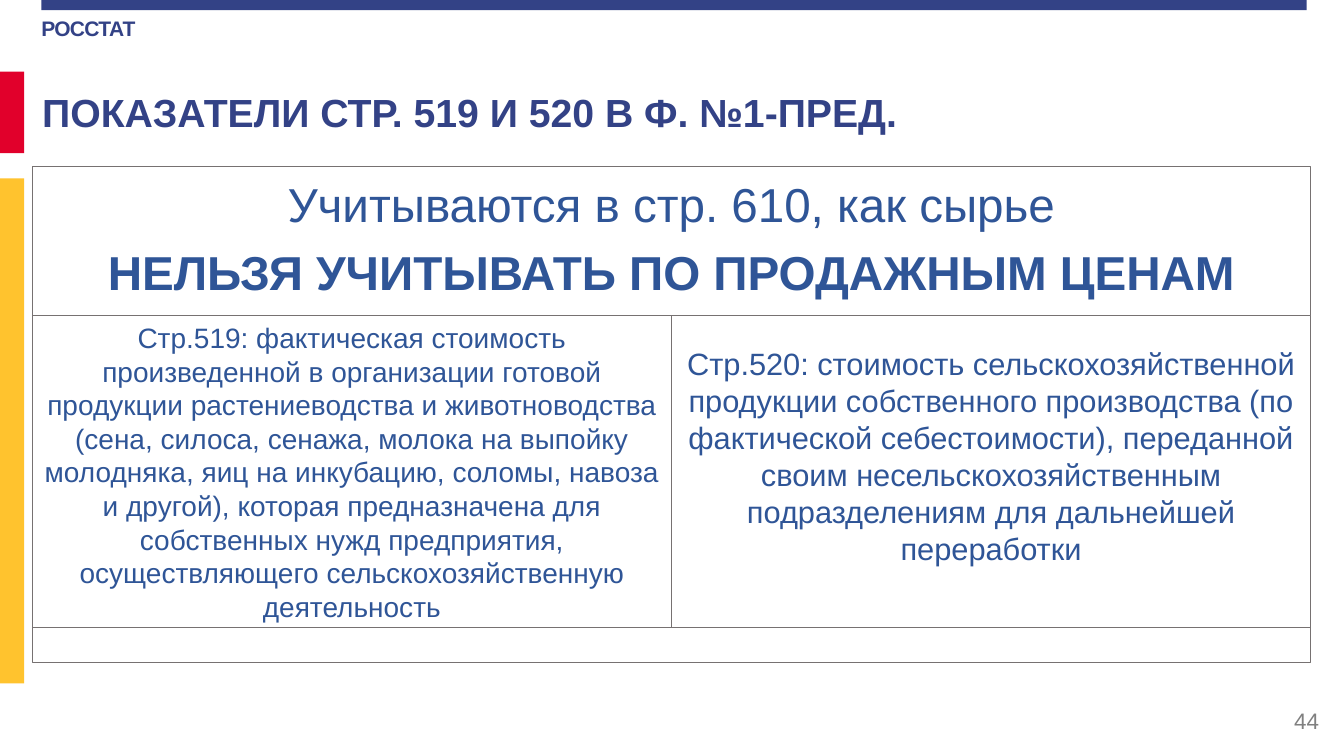
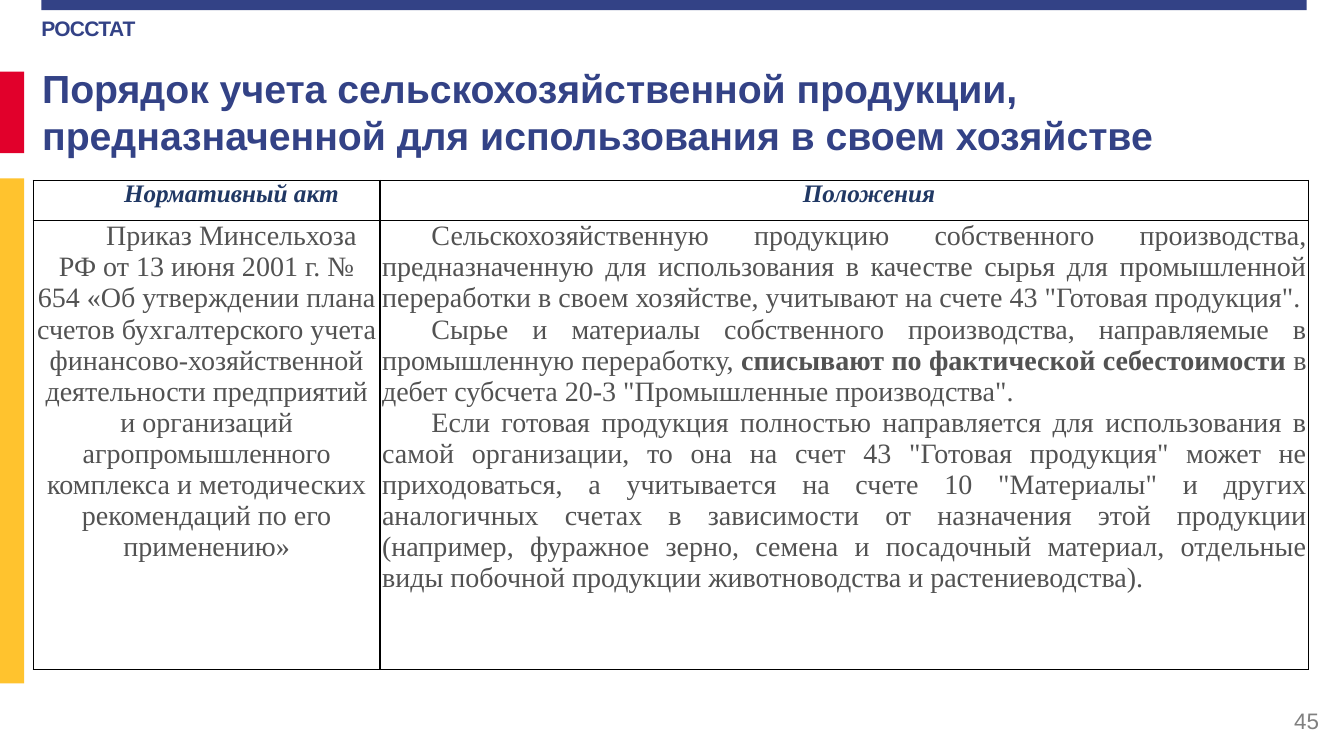
"""Build two slides on accounting for farm produce used within the organisation."""
from dataclasses import dataclass, field
from typing import Any

import pptx
import pptx.dml.color
import pptx.enum.shapes
import pptx.enum.text
import pptx.oxml
import pptx.oxml.ns
import pptx.util

Inches = pptx.util.Inches
Pt = pptx.util.Pt
Align = pptx.enum.text.PP_ALIGN
Anchor = pptx.enum.text.MSO_ANCHOR


@dataclass(frozen=True)
class Theme:
    """Colours, fonts and type sizes of the deck."""
    navy: str = "334286"
    red: str = "E1002B"
    amber: str = "FFC32E"
    white: str = "FFFFFF"
    blue: str = "2F5597"
    frame: str = "767171"
    grid: str = "000000"
    heading: str = "203864"
    body: str = "525252"
    number: str = "808080"
    sans: str = "Arial"
    serif: str = "Times New Roman"
    agency_size: int = 15
    number_size: int = 16
    heading_size: int = 18
    body_size: int = 20
    note_size: int = 22
    title_size: int = 28
    banner_size: int = 34


THEME = Theme()


@dataclass(frozen=True)
class Area:
    """A rectangle in inches."""
    left: float
    top: float
    width: float
    height: float

    def lengths(self) -> list[int]:
        """Return the four lengths for a shape call."""
        return [Inches(value) for value in (self.left, self.top, self.width, self.height)]


@dataclass(frozen=True)
class Style:
    """The look of a span of text."""
    size: int
    color: str
    name: str = THEME.sans
    bold: bool = False
    italic: bool = False


@dataclass(frozen=True)
class Span:
    """Text that may be emphasised."""
    text: str
    bold: bool = False


@dataclass(frozen=True)
class Frame:
    """Insets in inches (left, top, right, bottom), anchor and paragraph format."""
    insets: tuple[float, float, float, float] = (0.1, 0.05, 0.1, 0.05)
    anchor: Any = Anchor.TOP
    layout: dict[str, Any] = field(default_factory=dict)
    first_line: float = 0


@dataclass(frozen=True)
class Panel:
    """A framed panel with its text."""
    area: Area
    line_width: float
    paragraphs: list[list[Span]]
    style: Style
    frame: Frame


@dataclass(frozen=True)
class Bar:
    """A coloured bar of the page decoration."""
    area: Area
    color: str


@dataclass(frozen=True)
class Entry:
    """A table cell with its text."""
    paragraphs: list[list[Span]]
    style: Style
    align: Any = Align.CENTER


BARS = [
    Bar(Area(0.41, 0, 12.55, 0.1), THEME.navy),
    Bar(Area(0, 0.71, 0.24, 0.81), THEME.red),
    Bar(Area(0, 1.77, 0.24, 5.01), THEME.amber),
]
AGENCY = Style(THEME.agency_size, THEME.navy, bold=True)
TITLE = Style(THEME.title_size, THEME.navy, bold=True)
NUMBER = Style(THEME.number_size, THEME.number)
HEADING = Style(THEME.heading_size, THEME.heading, THEME.serif, True, True)
BODY = Style(THEME.body_size, THEME.body, THEME.serif)

LEFT, WIDTH, HALF = 0.32, 12.68, 6.34
CENTERED = {"alignment": Align.CENTER}
PANELS = [
    Panel(Area(LEFT, 1.65, WIDTH, 1.48), 0.75,
          [[Span("Учитываются в стр. 610, как сырье")],
           [Span("НЕЛЬЗЯ УЧИТЫВАТЬ ПО ПРОДАЖНЫМ ЦЕНАМ", True)]],
          Style(THEME.banner_size, THEME.blue),
          Frame((0.14,) * 4, Anchor.MIDDLE,
                CENTERED | {"line_spacing": 0.9, "space_after": Pt(12)})),
    Panel(Area(LEFT, 3.13, HALF, 3.1), 1,
          [[Span("Стр.519: фактическая стоимость произведенной в организации готовой "
                 "продукции растениеводства и животноводства (сена, силоса, сенажа, "
                 "молока на выпойку молодняка, яиц на инкубацию, соломы, навоза и другой), "
                 "которая предназначена для собственных нужд предприятия, "
                 "осуществляющего сельскохозяйственную деятельность")]],
          Style(THEME.body_size, THEME.blue),
          Frame((0.08,) * 4, Anchor.MIDDLE, CENTERED)),
    Panel(Area(LEFT + HALF, 3.13, HALF, 3.1), 1,
          [[Span("Стр.520: стоимость сельскохозяйственной продукции собственного "
                 "производства (по фактической себестоимости), переданной своим "
                 "несельскохозяйственным подразделениям для дальнейшей переработки")]],
          Style(THEME.note_size, THEME.blue),
          Frame((0.09, 0.09, 0.09, 0.41), Anchor.MIDDLE, CENTERED)),
    Panel(Area(LEFT, 6.23, WIDTH, 0.34), 0.75, [],
          Style(THEME.body_size, THEME.blue), Frame()),
]

TABLE_AREA = Area(0.33, 1.79, 12.65, 4.85)
COLUMNS = [3.44, 9.21]
ROWS = [0.4, 4.45]
ENTRIES = [
    [Entry([[Span("Нормативный акт")]], HEADING),
     Entry([[Span("Положения")]], HEADING)],
    [Entry([[Span("Приказ Минсельхоза РФ от 13 июня 2001 г. № 654 «Об утверждении плана "
                  "счетов бухгалтерского учета финансово-хозяйственной деятельности "
                  "предприятий и организаций агропромышленного комплекса и методических "
                  "рекомендаций по его применению»")]], BODY),
     Entry([[Span("Сельскохозяйственную продукцию собственного производства, "
                  "предназначенную для использования в качестве сырья для промышленной "
                  "переработки в своем хозяйстве, учитывают на счете 43 "
                  "\"Готовая продукция\".")],
            [Span("Сырье и материалы собственного производства, направляемые в "
                  "промышленную переработку, "),
             Span("списывают по фактической себестоимости", True),
             Span(" в дебет субсчета 20-3 \"Промышленные производства\".")],
            [Span("Если готовая продукция полностью направляется для использования в "
                  "самой организации, то она на счет 43 \"Готовая продукция\" может не "
                  "приходоваться, а учитывается на счете 10 \"Материалы\" и других "
                  "аналогичных счетах в зависимости от назначения этой продукции "
                  "(например, фуражное зерно, семена и посадочный материал, отдельные "
                  "виды побочной продукции животноводства и растениеводства).")]],
           BODY, Align.JUSTIFY)],
]


def rgb(color: str) -> Any:
    """Turn a hex string into a colour."""
    return pptx.dml.color.RGBColor.from_string(color)


def apply(target: Any, values: dict[str, Any]) -> None:
    """Set each named attribute of the target."""
    for name, value in values.items():
        setattr(target, name, value)


def write(text_frame: Any, paragraphs: list[list[Span]], style: Style, frame: Frame) -> None:
    """Fill a text frame with styled paragraphs."""
    for index, spans in enumerate(paragraphs):
        para = text_frame.add_paragraph() if index else text_frame.paragraphs[0]
        apply(para, frame.layout)
        if frame.first_line:
            properties = para._p.get_or_add_pPr()
            properties.set("marL", "0")
            properties.set("indent", str(Inches(frame.first_line)))
        for span in spans:
            run = para.add_run()
            run.text = span.text
            apply(run.font, {"size": Pt(style.size), "name": style.name,
                             "bold": style.bold or span.bold, "italic": style.italic})
            run.font.color.rgb = rgb(style.color)


def set_frame(holder: Any, frame: Frame) -> None:
    """Set the insets and anchor of a text frame or cell."""
    sides = ("margin_left", "margin_top", "margin_right", "margin_bottom")
    apply(holder, dict(zip(sides, map(Inches, frame.insets))))
    holder.vertical_anchor = frame.anchor


def add_text(page: Any, area: Area, text: str, style: Style, frame: Frame) -> Any:
    """Add a one-paragraph text box."""
    box = page.shapes.add_textbox(*area.lengths())
    box.text_frame.word_wrap = True
    set_frame(box.text_frame, frame)
    write(box.text_frame, [[Span(text)]], style, frame)
    return box


def add_block(page: Any, area: Area, color: str) -> Any:
    """Add a plain filled rectangle."""
    block = page.shapes.add_shape(pptx.enum.shapes.MSO_SHAPE.RECTANGLE, *area.lengths())
    block.shadow.inherit = False
    block.fill.solid()
    block.fill.fore_color.rgb = rgb(color)
    block.line.fill.background()
    return block


def add_panel(page: Any, panel: Panel) -> None:
    """Add a framed panel with centred text."""
    block = add_block(page, panel.area, THEME.white)
    block.line.color.rgb = rgb(THEME.frame)
    block.line.width = Pt(panel.line_width)
    block.text_frame.word_wrap = True
    set_frame(block.text_frame, panel.frame)
    write(block.text_frame, panel.paragraphs, panel.style, panel.frame)


def add_borders(cell: Any) -> None:
    """Draw a thin line on every side of a cell."""
    properties = cell._tc.get_or_add_tcPr()
    for side in ("lnL", "lnR", "lnT", "lnB"):
        properties.append(pptx.oxml.parse_xml(
            f'<a:{side} {pptx.oxml.ns.nsdecls("a")} w="{Pt(1)}"><a:solidFill>'
            f'<a:srgbClr val="{THEME.grid}"/></a:solidFill></a:{side}>'))


def add_rules_table(page: Any) -> None:
    """Add the table of regulations and their provisions."""
    table = page.shapes.add_table(len(ROWS), len(COLUMNS), *TABLE_AREA.lengths()).table
    apply(table, {"first_row": False, "horz_banding": False})
    for column, width in zip(table.columns, COLUMNS):
        column.width = Inches(width)
    for row, height, entries in zip(table.rows, ROWS, ENTRIES):
        row.height = Inches(height)
        for cell, entry in zip(row.cells, entries):
            frame = Frame((0.02, 0, 0.02, 0), layout={"alignment": entry.align},
                          first_line=0.49)
            set_frame(cell, frame)
            add_borders(cell)
            cell.fill.background()
            write(cell.text_frame, entry.paragraphs, entry.style, frame)


def add_page(deck: Any, number: int, title: str, title_area: Area) -> Any:
    """Add a blank page with the shared bars, agency name, number and title."""
    page = deck.slides.add_slide(deck.slide_layouts[6])
    agency = add_text(page, Area(0.41, 0.14, 1.15, 0.32), "РОССТАТ", AGENCY,
                      Frame((0, 0.01, 0, 0)))
    agency.text_frame.paragraphs[0].runs[0]._r.get_or_add_rPr().set("spc", "-50")
    for bar in BARS:
        add_block(page, bar.area, bar.color)
    add_text(page, Area(10.18, 6.95, 3, 0.4), str(number), NUMBER,
             Frame(anchor=Anchor.MIDDLE, layout={"alignment": Align.RIGHT}))
    add_text(page, title_area, title, TITLE, Frame())
    return page


def main() -> None:
    """Build and save the deck."""
    deck = pptx.Presentation()
    apply(deck, {"slide_width": Inches(13.33), "slide_height": Inches(7.5)})
    page = add_page(deck, 44, "ПОКАЗАТЕЛИ СТР. 519 И 520 В Ф. №1-ПРЕД.",
                    Area(LEFT, 0.83, WIDTH, 0.59))
    for panel in PANELS:
        add_panel(page, panel)
    page = add_page(deck, 45, "Порядок учета сельскохозяйственной продукции, "
                    "предназначенной для использования в своем хозяйстве",
                    Area(LEFT, 0.59, WIDTH, 1.02))
    add_rules_table(page)
    deck.save("out.pptx")


if __name__ == "__main__":
    main()
